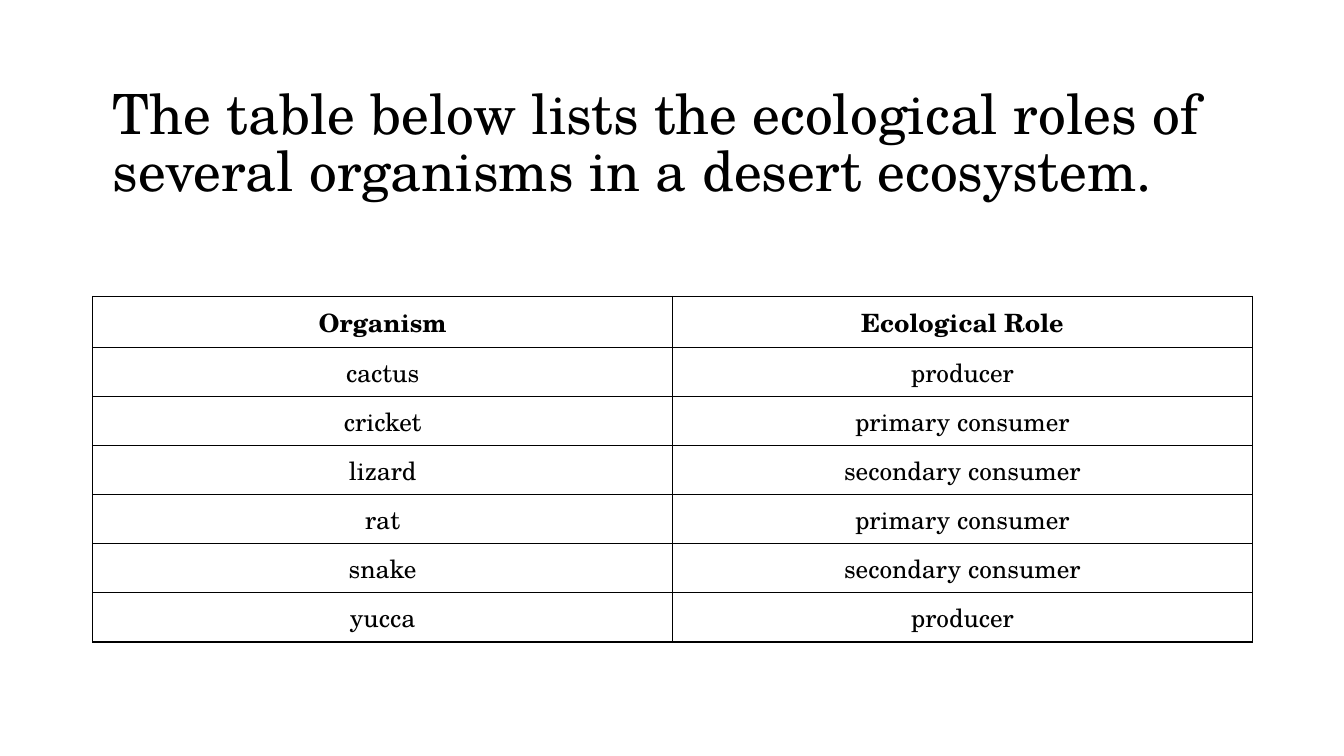
import pptx
import pptx.util
import pptx.dml.color
import pptx.enum.text
import pptx.oxml
import pptx.oxml.ns

TITLE = "The table below lists the ecological roles of several organisms in a desert ecosystem."
ROWS = [
    ("Organism", "Ecological Role"),
    ("cactus", "producer"),
    ("cricket", "primary consumer"),
    ("lizard", "secondary consumer"),
    ("rat", "primary consumer"),
    ("snake", "secondary consumer"),
    ("yucca", "producer"),
]
FONT = "TeX Gyre Schola"
BLACK = pptx.dml.color.RGBColor(0, 0, 0)
WHITE = pptx.dml.color.RGBColor(255, 255, 255)
LEFT, TOP, WIDTH = 0.92, 2.94, 11.5
HEADER_H, ROW_H = 0.5, 0.48
PAD = 0.06

Inches = pptx.util.Inches
Pt = pptx.util.Pt
ANCHOR = pptx.enum.text.MSO_ANCHOR
ALIGN = pptx.enum.text.PP_ALIGN


def add_run(p, text, size, bold, align):
    p.alignment = align
    r = p.add_run()
    r.text = text
    r.font.name = FONT
    r.font.size = Pt(size)
    r.font.bold = bold
    r.font.color.rgb = BLACK


def add_borders(cell):
    tcPr = cell._tc.get_or_add_tcPr()
    for i, side in enumerate(("lnL", "lnR", "lnT", "lnB")):
        tcPr.insert(i, pptx.oxml.parse_xml(
            f'<a:{side} {pptx.oxml.ns.nsdecls("a")} w="{Pt(1)}"><a:solidFill>'
            f'<a:srgbClr val="{BLACK}"/></a:solidFill></a:{side}>'))


def add_title(s):
    title = s.shapes.title
    title.left, title.top = Inches(1.02), Inches(1.22)
    title.width, title.height = Inches(WIDTH), Inches(1.45)
    tf = title.text_frame
    tf.word_wrap = True
    tf.auto_size = pptx.enum.text.MSO_AUTO_SIZE.NONE
    tf.vertical_anchor = ANCHOR.BOTTOM
    tf.margin_bottom = Inches(0.66)
    p = tf.paragraphs[0]
    p.line_spacing = 0.85
    add_run(p, TITLE, 39.6, False, ALIGN.LEFT)


def add_roles(s):
    height = HEADER_H + ROW_H * (len(ROWS) - 1)
    table = s.shapes.add_table(len(ROWS), len(ROWS[0]), Inches(LEFT), Inches(TOP),
                               Inches(WIDTH), Inches(height)).table
    table.first_row = table.horz_banding = False
    for i, row in enumerate(ROWS):
        table.rows[i].height = Inches(ROW_H if i else HEADER_H)
        for j, text in enumerate(row):
            cell = table.cell(i, j)
            cell.fill.solid()
            cell.fill.fore_color.rgb = WHITE
            cell.margin_left = cell.margin_right = Inches(PAD)
            cell.margin_top = cell.margin_bottom = Inches(PAD)
            cell.vertical_anchor = ANCHOR.MIDDLE
            add_run(cell.text_frame.paragraphs[0], text, 18, i == 0, ALIGN.CENTER)
            add_borders(cell)


def main():
    prs = pptx.Presentation()
    prs.slide_width, prs.slide_height = Inches(13.33), Inches(7.5)
    s = prs.slides.add_slide(prs.slide_layouts[5])
    add_title(s)
    add_roles(s)
    prs.save("out.pptx")


if __name__ == "__main__":
    main()
